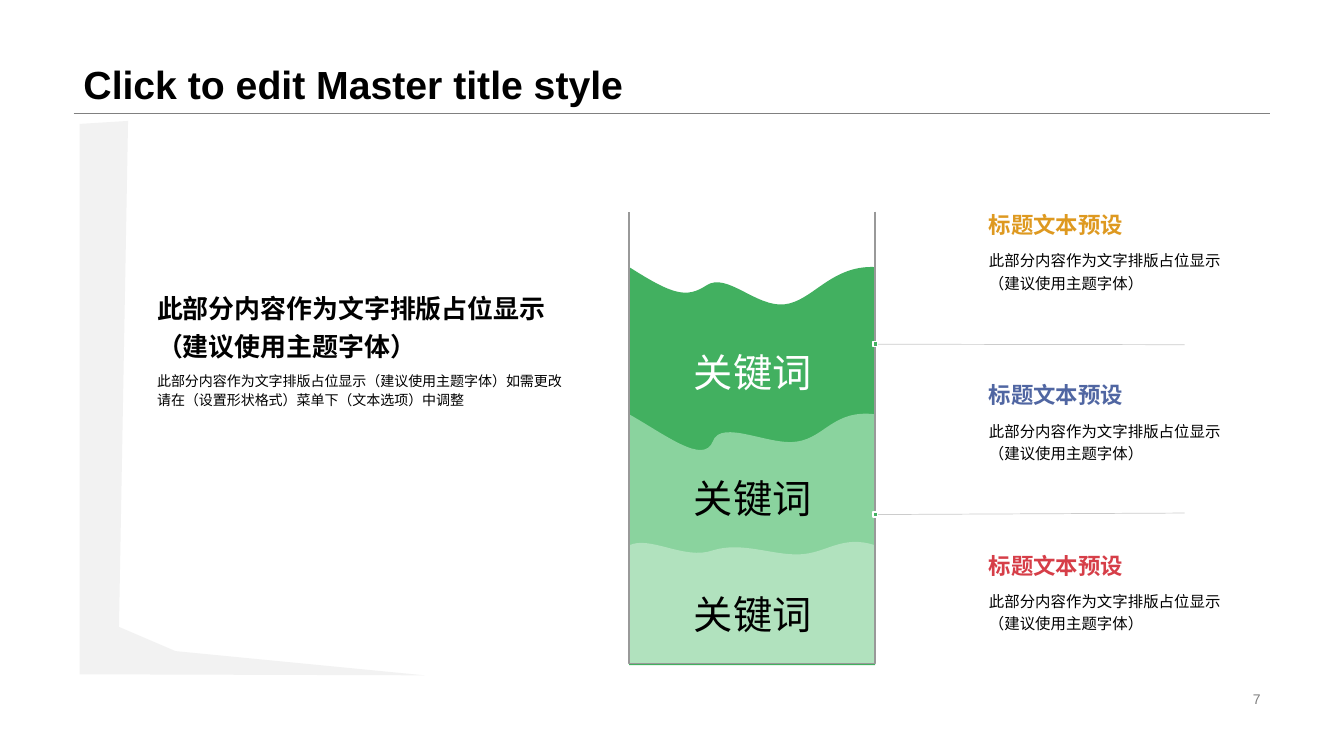
import pptx
import pptx.util
import pptx.dml.color
import pptx.enum.shapes
import pptx.enum.text
import pptx.oxml.ns
from dataclasses import dataclass
from lxml import etree

Inches = pptx.util.Inches
Pt = pptx.util.Pt
ALIGN = pptx.enum.text.PP_ALIGN
ANCHOR = pptx.enum.text.MSO_ANCHOR
SHAPE = pptx.enum.shapes.MSO_SHAPE
CONNECTOR = pptx.enum.shapes.MSO_CONNECTOR
qn = pptx.oxml.ns.qn


@dataclass(frozen=True)
class Theme:
    font: str = "Arial"
    black: str = "000000"
    white: str = "FFFFFF"
    gray: str = "808080"
    glass: str = "999999"
    leader: str = "CCCCCC"
    ribbon: str = "F2F2F2"
    greens: tuple = ("42B060", "8AD39E", "B1E2BE")
    accents: tuple = ("DE9920", "5066A2", "D63E48")
    title: float = 28
    keyword: float = 28
    lead: float = 18.5
    heading: float = 16
    body: float = 11
    note: float = 10


T = Theme()
PLACEHOLDER = "此部分内容作为文字排版占位显示\n（建议使用主题字体）"
NOTE = ("此部分内容作为文字排版占位显示（建议使用主题字体）如需更改"
        "请在（设置形状格式）菜单下（文本选项）中调整")

# Each layer: surface as a start point and three points per Bézier curve,
# then the bottom; inches from the top left of the glass.
LAYERS = [
    ([(0, 0.55), (0.44, 0.83), (0.57, 0.86), (0.77, 0.73),
      (0.97, 0.60), (1.26, 0.95), (1.54, 0.92),
      (1.82, 0.89), (2.00, 0.53), (2.44, 0.55)], 4.5),
    ([(0, 2.01), (0.37, 2.22), (0.74, 2.51), (0.83, 2.28),
      (0.91, 2.05), (1.40, 2.33), (1.67, 2.28),
      (1.94, 2.24), (2.03, 1.96), (2.44, 2.01)], 4.48),
    ([(0, 3.31), (0.21, 3.21), (0.55, 3.46), (0.83, 3.36),
      (1.12, 3.27), (1.42, 3.41), (1.69, 3.40),
      (1.96, 3.39), (2.11, 3.20), (2.44, 3.31)], 4.48),
]
KEYWORD_TOPS = (1.27, 2.52, 3.67)


def rgb(color):
    return pptx.dml.color.RGBColor.from_string(color)


def add_text(slide, box, text, size, color=T.black, bold=False, align=ALIGN.LEFT,
             anchor=ANCHOR.MIDDLE, spacing=None, wrap=True):
    tf = slide.shapes.add_textbox(*map(Inches, box)).text_frame
    tf.word_wrap = wrap
    tf.vertical_anchor = anchor
    p = tf.paragraphs[0]
    p.text = text
    p.alignment = align
    if spacing:
        p.line_spacing = spacing
    p.font.name = T.font
    p.font.size = Pt(size)
    p.font.bold = bold
    p.font.color.rgb = rgb(color)


def add_line(slide, start, end, color, width):
    line = slide.shapes.add_connector(CONNECTOR.STRAIGHT, *map(Inches, start + end))
    line.line.color.rgb = rgb(color)
    line.line.width = Pt(width)
    etree.SubElement(line._element.spPr, qn("a:effectLst"))
    return line


def add_outline(slide, origin, points, fill=None, line=None):
    """Draw points, given from origin, as a filled area or an open stroke."""
    left, top = origin
    (x, y), *rest = [(Inches(left + px), Inches(top + py)) for px, py in points]
    builder = slide.shapes.build_freeform(x, y)
    builder.add_line_segments(rest, close=fill is not None)
    sp = builder.convert_to_shape()
    sp.shadow.inherit = False
    if fill:
        sp.fill.solid()
        sp.fill.fore_color.rgb = rgb(fill)
    else:
        sp.fill.background()
    if line:
        sp.line.color.rgb = rgb(line)
        sp.line.width = Pt(1)
    else:
        sp.line.fill.background()
    return sp


def curve_segments(sp, count):
    """Turn the first count segments, three at a time, into Bézier curves."""
    segments = list(sp._element.iter(qn("a:lnTo")))[:count]
    for i in range(0, count, 3):
        first, *others = segments[i:i + 3]
        curve = etree.Element(qn("a:cubicBezTo"))
        first.addprevious(curve)
        for segment in (first, *others):
            curve.append(segment[0])
            segment.getparent().remove(segment)


def add_header(slide, left, top, width, height):
    add_line(slide, (left, top + height), (left + width, top + height), T.gray, 0.25)
    add_text(slide, (left, top, width, height), "Click to edit Master title style",
             T.title, bold=True, anchor=ANCHOR.BOTTOM, spacing=0.9)


def add_glass(slide, left, top, width, height):
    for (surface, bottom), color in zip(LAYERS, T.greens):
        sp = add_outline(slide, (left, top), surface + [(width, bottom), (0, bottom)],
                         fill=color)
        curve_segments(sp, len(surface) - 1)
    add_outline(slide, (left, top), [(width, 0), (width, height), (0, height), (0, 0)],
                line=T.glass)
    for offset, color in zip(KEYWORD_TOPS, (T.white, T.black, T.black)):
        add_text(slide, (left + 0.4, top + offset, 1.65, 0.64), "关键词",
                 T.keyword, color, align=ALIGN.CENTER, wrap=False)


def add_leader(slide, left, top, right, end_y):
    """Draw a square marker and the line that runs from it."""
    side = 0.05
    marker = slide.shapes.add_shape(SHAPE.RECTANGLE, *map(Inches, (left, top, side, side)))
    marker.shadow.inherit = False
    marker.fill.solid()
    marker.fill.fore_color.rgb = rgb(T.greens[0])
    marker.line.color.rgb = rgb(T.white)
    marker.line.width = Pt(1)
    line = add_line(slide, (left + side, top + side / 2), (right, end_y), T.leader, 0.5)
    line.begin_connect(marker, 3)


def add_captions(slide, left, top, width, pitch):
    heading_height = 0.35
    for i, color in enumerate(T.accents):
        y = top + i * pitch
        add_text(slide, (left, y, width, heading_height), "标题文本预设",
                 T.heading, color, bold=True, anchor=ANCHOR.BOTTOM)
        add_text(slide, (left, y + heading_height, width, 0.79), PLACEHOLDER,
                 T.body, anchor=ANCHOR.TOP, spacing=1.2)


def add_summary(slide, left, top, width):
    lead_height = 0.83
    add_text(slide, (left, top, width, lead_height), PLACEHOLDER, T.lead,
             bold=True, spacing=1.2)
    add_text(slide, (left, top + lead_height, width, 0.47), NOTE, T.note, spacing=1.1)


def add_ribbon(slide, left, top):
    corners = [(0, 0.03), (0.48, 0), (0.39, 5.02), (0.95, 5.26), (3.42, 5.5), (0, 5.49)]
    add_outline(slide, (left, top), corners, fill=T.ribbon)


def main():
    prs = pptx.Presentation()
    prs.slide_width, prs.slide_height = Inches(13.33), Inches(7.5)
    slide = prs.slides.add_slide(prs.slide_layouts[6])
    add_header(slide, 0.73, 0, 11.87, 1.12)
    add_text(slide, (9.42, 6.82, 3.18, 0.23), "7", T.note, T.gray, align=ALIGN.RIGHT)
    add_glass(slide, 6.24, 2.1, 2.44, 4.48)
    for top, end_y in ((3.39, 3.42), (5.08, 5.09)):
        add_leader(slide, 8.66, top, 11.75, end_y)
    add_captions(slide, 9.71, 2.06, 2.82, 1.69)
    add_ribbon(slide, 0.79, 1.2)
    add_summary(slide, 1.46, 2.8, 4.26)
    prs.save("out.pptx")


if __name__ == "__main__":
    main()
